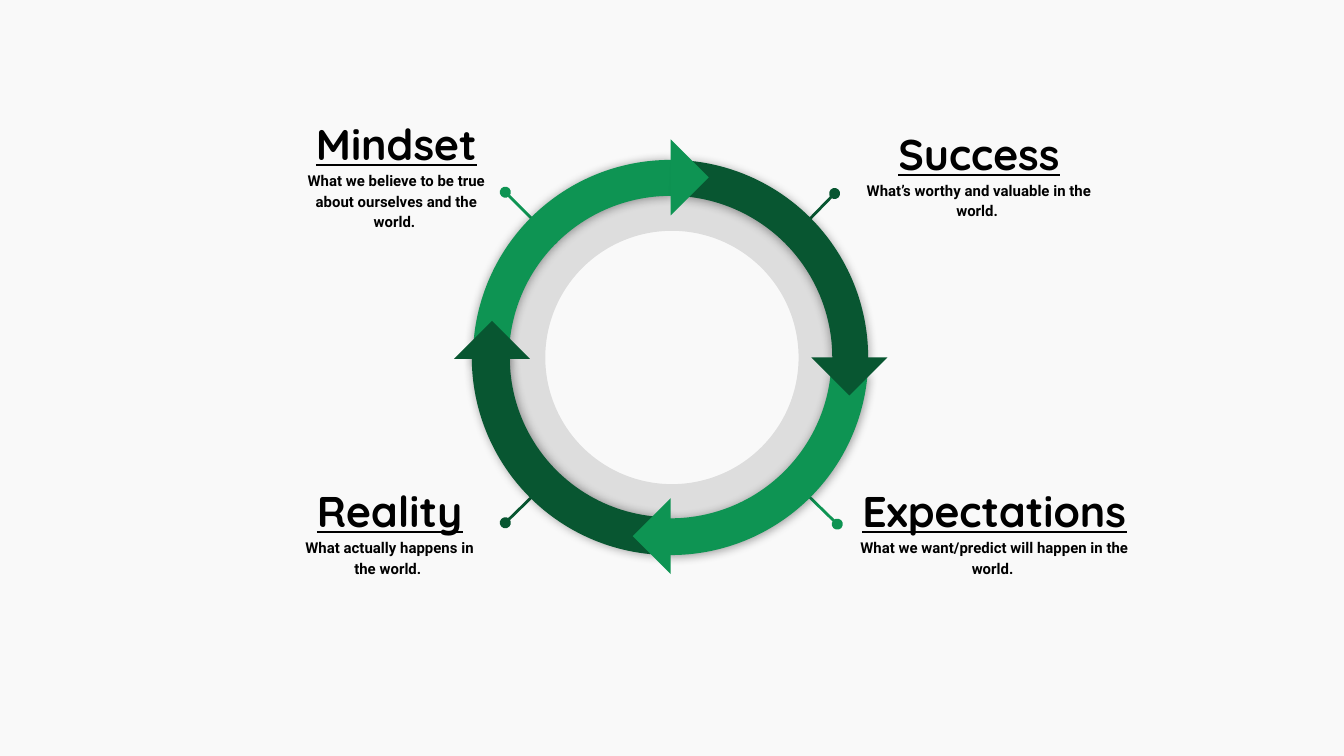
import pptx
import pptx.dml.color
import pptx.enum.shapes
import pptx.enum.text
import pptx.oxml.ns
import pptx.util
from lxml import etree

Inches = pptx.util.Inches
Pt = pptx.util.Pt
Shape = pptx.enum.shapes.MSO_SHAPE
qn = pptx.oxml.ns.qn

COLORS = {
    "background": "F9F9F9",
    "ink": "000000",
    "light": "0E9453",
    "dark": "085631",
}


def rgb(name):
    return pptx.dml.color.RGBColor.from_string(COLORS[name])


def add_alpha(color_parent, percent):
    """Make the first colour inside color_parent partly transparent."""
    color = color_parent.find(".//" + qn("a:srgbClr"))
    etree.SubElement(color, qn("a:alpha"), val=str(percent * 1000))


def add_filled(shapes, preset, left, top, size, color, rotation=0):
    shape = shapes.add_shape(preset, Inches(left), Inches(top), Inches(size), Inches(size))
    shape.rotation = rotation
    shape.shadow.inherit = False
    shape.fill.solid()
    shape.fill.fore_color.rgb = rgb(color)
    shape.line.fill.background()
    return shape


def add_soft_shadow(shape, direction):
    effects = shape._element.spPr.find(qn("a:effectLst"))
    shadow = etree.SubElement(
        effects, qn("a:outerShdw"), blurRad=str(Pt(5.6)), dist=str(Pt(0.8)),
        dir=str(direction * 60000), algn="bl", rotWithShape="0")
    etree.SubElement(shadow, qn("a:srgbClr"), val=COLORS["ink"])
    add_alpha(shadow, 40)


def add_arc(shapes, left, top, size, color, rotation, angles, thickness,
            flip=False, shadow_direction=90):
    """Add a block arc; angles are in degrees."""
    arc = add_filled(shapes, Shape.BLOCK_ARC, left, top, size, color, rotation)
    # Angles are stored in 1/60000 degree, adjustments in 1/100000.
    for index, angle in enumerate(angles):
        arc.adjustments[index] = angle * 0.6
    arc.adjustments[2] = thickness
    if flip:
        arc._element.spPr.find(qn("a:xfrm")).set("flipH", "1")
    add_soft_shadow(arc, shadow_direction)


def add_track(shapes, left, top, size):
    """Pale ring behind the arrows."""
    track = add_filled(shapes, Shape.DONUT, left, top, size, "ink")
    track.adjustments[0] = 0.161
    add_alpha(track._element.spPr.find(qn("a:solidFill")), 11)


def add_cycle(shapes, left, top, size):
    """Four arcs with arrowheads, running clockwise."""
    add_arc(shapes, left, top, size, "light", 330, (239.14, 331.21), 0.091, flip=True)
    add_arc(shapes, left, top, size, "dark", 30, (242.43, 331.7), 0.091)
    add_arc(shapes, left - 0.01, top, size, "dark", 150, (300.7, 29.98), 0.096,
            shadow_direction=0)
    add_arc(shapes, left, top, size, "light", 210, (299.45, 25.49), 0.093, flip=True)

    head = 0.4
    arrowheads = [
        (-0.06, 1.28, "dark", 135),
        (2.6, 1.27, "dark", 315),
        (1.27, 2.6, "light", 45),
        (1.27, -0.07, "light", 225),
    ]
    for dx, dy, color, rotation in arrowheads:
        add_filled(shapes, Shape.RIGHT_TRIANGLE, left + dx, top + dy, head, color, rotation)


def write(paragraph, text, font, size, underline=False):
    paragraph.alignment = pptx.enum.text.PP_ALIGN.CENTER
    paragraph.line_spacing = 1.15
    run = paragraph.add_run()
    run.text = text
    run.font.name = font
    run.font.size = Pt(size)
    run.font.bold = True
    run.font.underline = underline
    run.font.color.rgb = rgb("ink")


def add_callout(shapes, box, heading, description, dot, ring_point, color):
    """Heading and description in box, with a leader from its dot to the ring."""
    group = shapes.add_group_shape().shapes
    leader = group.add_connector(
        pptx.enum.shapes.MSO_CONNECTOR.STRAIGHT, *map(Inches, dot + ring_point))
    leader.line.color.rgb = rgb(color)
    leader.line.width = Pt(1.5)
    etree.SubElement(leader.line._get_or_add_ln(), qn("a:headEnd"), type="oval")
    etree.SubElement(leader._element.spPr, qn("a:effectLst"))

    frame = group.add_textbox(*map(Inches, box)).text_frame
    frame.word_wrap = True
    frame.margin_left = frame.margin_right = Inches(0.1)
    frame.margin_top = frame.margin_bottom = Inches(0.1)
    write(frame.paragraphs[0], heading, font="Quicksand", size=23, underline=True)
    write(frame.add_paragraph(), description, font="Roboto", size=8)


def main():
    deck = pptx.Presentation()
    deck.slide_width = Inches(10)
    deck.slide_height = deck.slide_width * 9 // 16
    slide = deck.slides.add_slide(deck.slide_layouts[6])
    slide.background.fill.solid()
    slide.background.fill.fore_color.rgb = rgb("background")

    add_track(slide.shapes, 3.61, 1.27, 2.78)
    callouts = [
        ((2.13, 0.72, 1.64, 1.09), "Mindset",
         "What we believe to be true about ourselves and the world. ",
         (3.76, 1.43), (4.14, 1.81), "light"),
        ((2.08, 3.45, 1.64, 0.73), "Reality",
         "What actually happens in the world. ",
         (3.76, 3.89), (4.14, 3.52), "dark"),
        ((6.25, 3.45, 2.3, 1.09), "Expectations",
         "What we want/predict will happen in the world. ",
         (6.23, 3.9), (5.84, 3.52), "light"),
        ((6.21, 0.79, 2.15, 0.94), "Success",
         "What’s worthy and valuable in the world. ",
         (6.21, 1.44), (5.85, 1.81), "dark"),
    ]
    for callout in callouts:
        add_callout(slide.shapes, *callout)
    add_cycle(slide.shapes, 3.52, 1.19, 2.94)

    deck.save("out.pptx")


if __name__ == "__main__":
    main()
